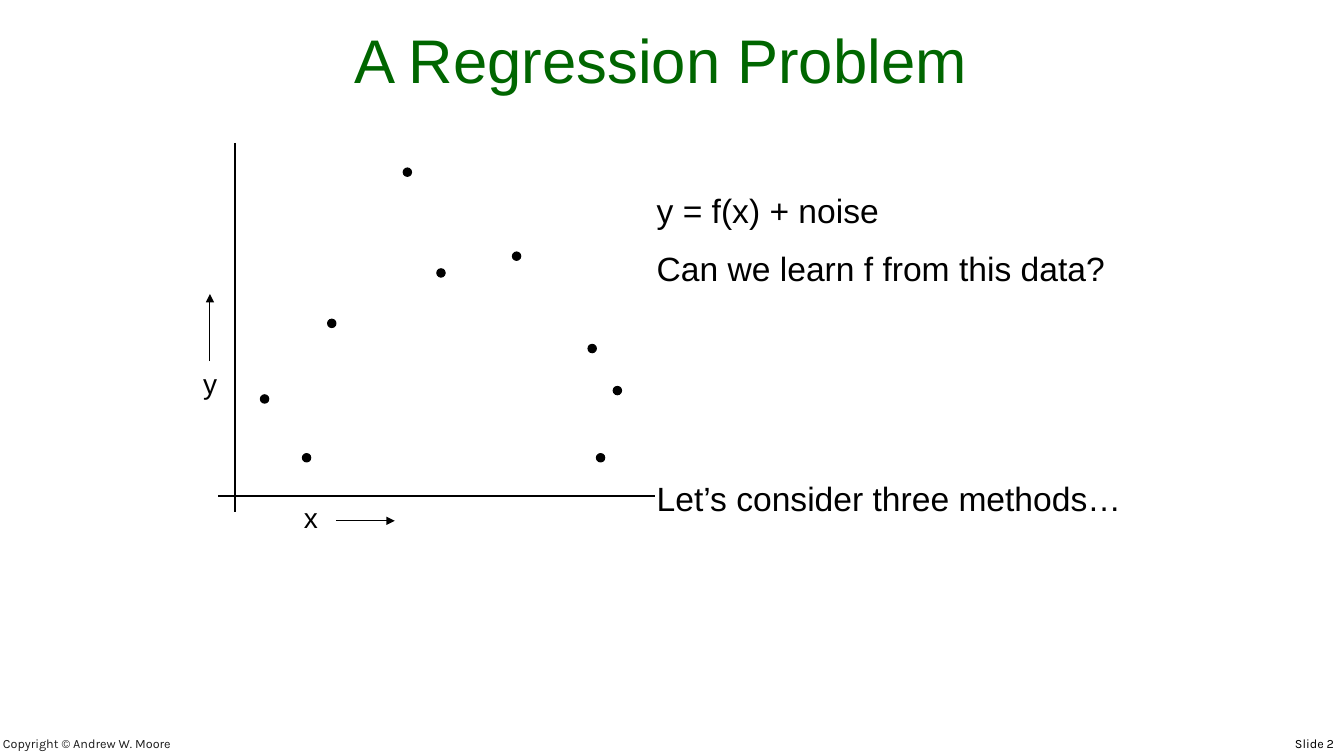
"""Builds the slide that poses a regression problem."""
from dataclasses import dataclass

from lxml.etree import SubElement
from pptx import Presentation
from pptx.dml.color import RGBColor
from pptx.enum.shapes import MSO_CONNECTOR, MSO_SHAPE
from pptx.enum.text import MSO_ANCHOR, PP_ALIGN
from pptx.oxml.ns import qn
from pptx.util import Pt


@dataclass(frozen=True)
class Theme:
    """Holds the fonts, colours, type sizes and line widths."""
    body_font: str = "Arial"
    footer_font: str = "Karla"
    title_color: str = "006600"
    ink: str = "000000"
    footer_ink: str = "1C1C1C"
    title_size: int = 44
    body_size: int = 24
    label_size: int = 20
    footer_size: int = 9
    axis_width: float = 1.5
    thin_width: float = 0.75


class SlideBuilder:
    """Draws styled elements on one slide, with lengths in points."""

    def __init__(self, slide, theme):
        """Keeps the slide and its theme."""
        self.shapes = slide.shapes
        self.theme = theme

    def text(self, box, lines, size, color=None, font=None,
             align=PP_ALIGN.LEFT, anchor=MSO_ANCHOR.TOP):
        """Adds a text box from pairs of wording and space before."""
        frame = self.shapes.add_textbox(*map(Pt, box)).text_frame
        frame.word_wrap = True
        frame.vertical_anchor = anchor
        for index, (wording, space) in enumerate(lines):
            paragraph = frame.add_paragraph() if index else frame.paragraphs[0]
            paragraph.alignment = align
            paragraph.space_before = Pt(space)
            run = paragraph.add_run()
            run.text = wording
            run.font.size = Pt(size)
            run.font.name = font or self.theme.body_font
            run.font.color.rgb = RGBColor.from_string(color or self.theme.ink)

    def line(self, start, end, width, arrow=False):
        """Adds a straight line, with an arrowhead at its end if wanted."""
        connector = self.shapes.add_connector(
            MSO_CONNECTOR.STRAIGHT, *map(Pt, (*start, *end)))
        connector.line.width = Pt(width)
        connector.line.color.rgb = RGBColor.from_string(self.theme.ink)
        properties = connector.element.spPr
        if arrow:
            SubElement(properties.find(qn("a:ln")), qn("a:tailEnd"), type="triangle")
        SubElement(properties, qn("a:effectLst"))

    def dot(self, left, top, diameter=6):
        """Adds one data point."""
        point = self.shapes.add_shape(
            MSO_SHAPE.OVAL, *map(Pt, (left, top, diameter, diameter)))
        point.shadow.inherit = False
        point.fill.solid()
        point.fill.fore_color.rgb = RGBColor.from_string(self.theme.ink)
        point.line.color.rgb = RGBColor.from_string(self.theme.ink)
        point.line.width = Pt(self.theme.thin_width)


def main():
    """Builds and saves the presentation."""
    deck = Presentation()
    deck.slide_width, deck.slide_height = Pt(960), Pt(540)
    theme = Theme()
    page = SlideBuilder(deck.slides.add_slide(deck.slide_layouts[6]), theme)

    page.text((-5, 520, 533, 20), [("Copyright © Andrew W. Moore", 0)],
              theme.footer_size, theme.footer_ink, theme.footer_font,
              anchor=MSO_ANCHOR.BOTTOM)
    page.text((584, 522, 376, 18), [("Slide 2", 0)], theme.footer_size,
              font=theme.footer_font, align=PP_ALIGN.RIGHT)
    page.text((24, 12, 896, 60), [("A Regression Problem", 0)],
              theme.title_size, theme.title_color,
              align=PP_ALIGN.CENTER, anchor=MSO_ANCHOR.BOTTOM)

    page.line((168, 102), (168, 366), theme.axis_width)
    page.line((156, 354), (468, 354), theme.axis_width)
    data_points = [(186, 282), (216, 324), (234, 228), (288, 120), (312, 192),
                   (366, 180), (426, 324), (438, 276), (420, 246)]
    for left, top in data_points:
        page.dot(left, top)

    axis_labels = [("x", (210, 354), (240, 372), (282, 372)),
                   ("y", (138, 258), (150, 258), (150, 210))]
    for variable, corner, arrow_start, arrow_end in axis_labels:
        page.text((*corner, 24, 31), [(variable, 0)], theme.label_size)
        page.line(arrow_start, arrow_end, theme.thin_width, arrow=True)

    page.text((462, 132, 366, 254),
              [("y = f(x) + noise", 0),
               ("Can we learn f from this data?", 13),
               ("Let’s consider three methods…", 135.5)], theme.body_size)
    deck.save("out.pptx")


if __name__ == "__main__":
    main()
